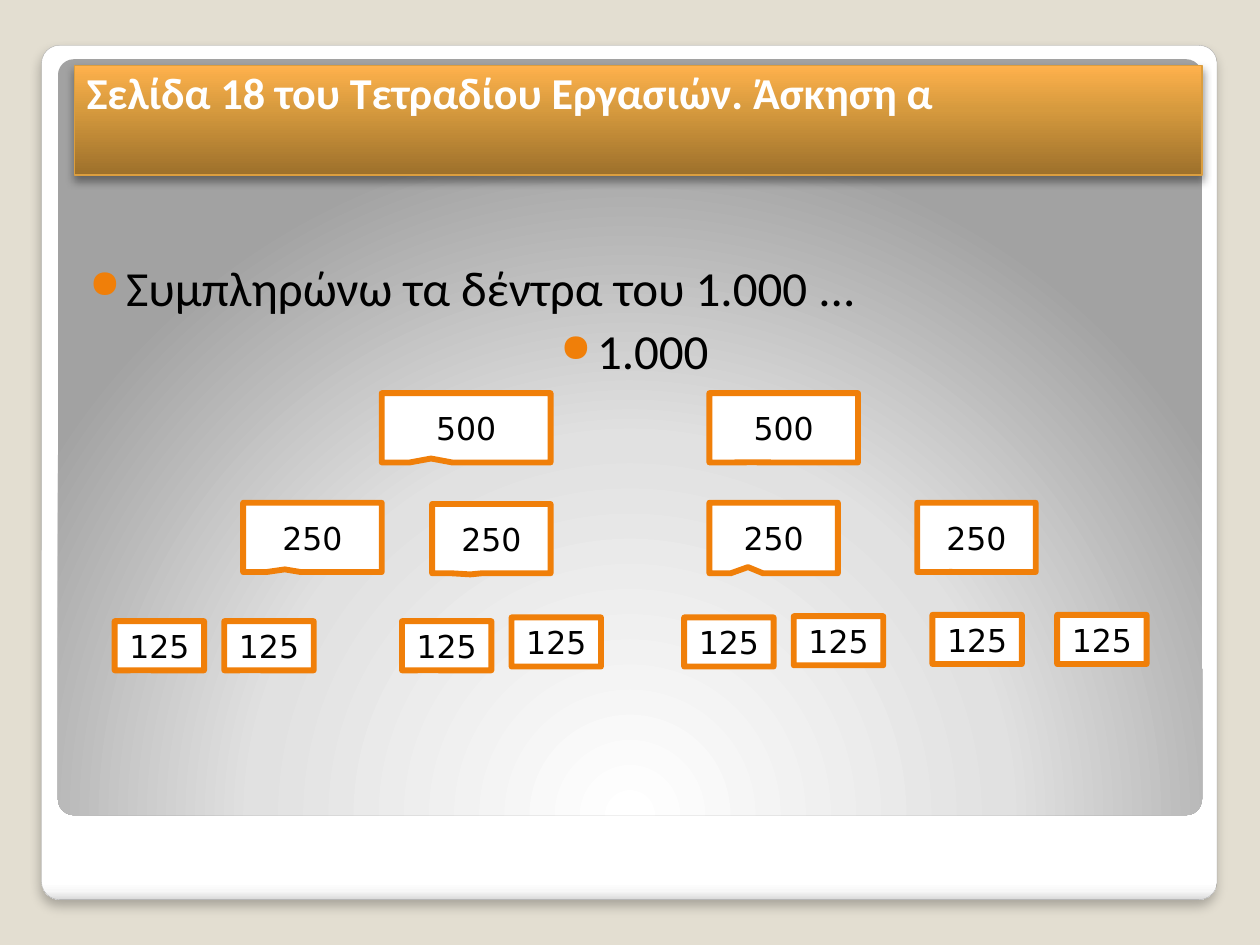
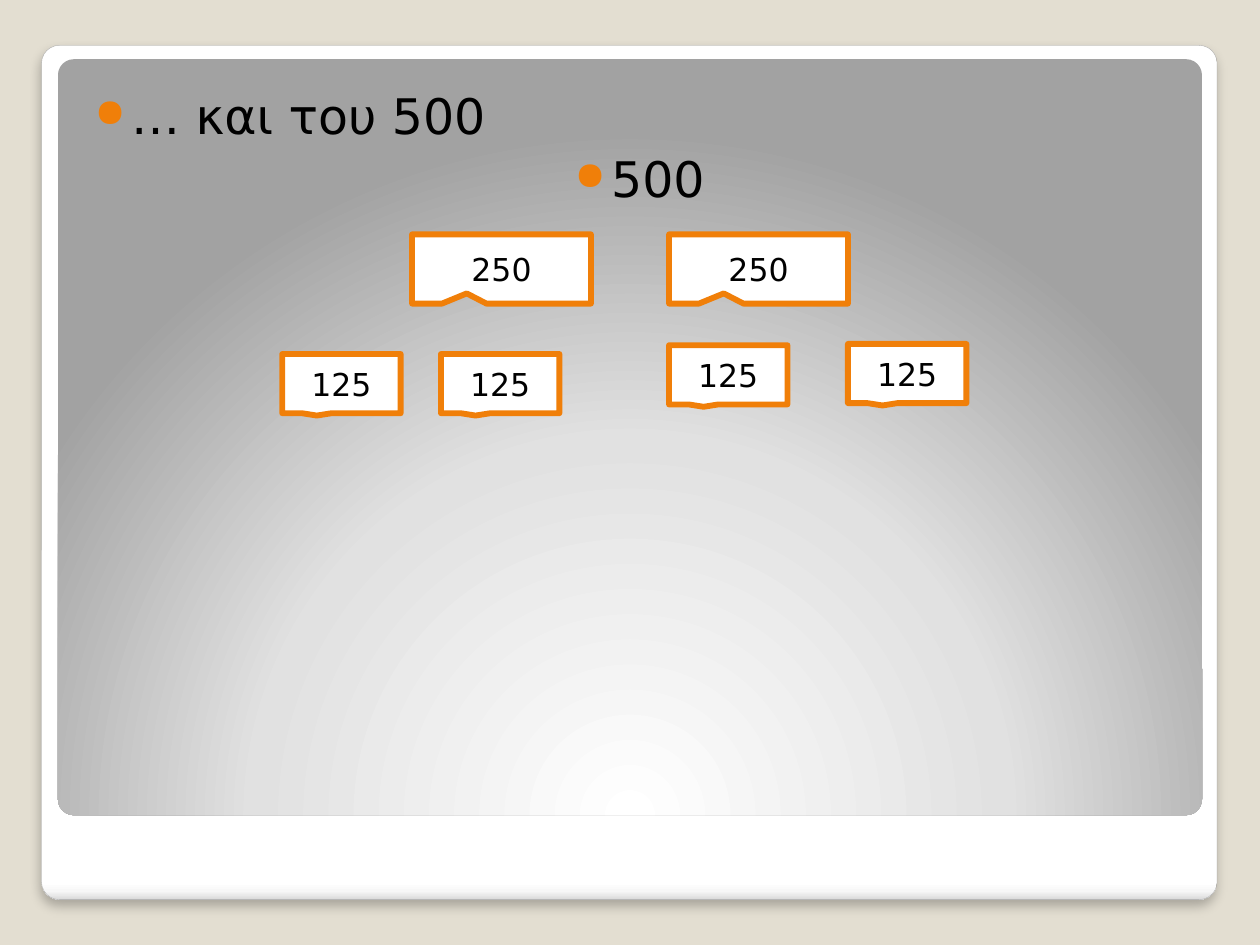
from lxml import etree
from pptx import Presentation
from pptx.dml.color import RGBColor
from pptx.enum.shapes import MSO_SHAPE
from pptx.enum.text import MSO_ANCHOR, PP_ALIGN
from pptx.oxml.ns import qn
from pptx.util import Inches, Pt

RECT = MSO_SHAPE.RECTANGLE
ROUND = MSO_SHAPE.ROUNDED_RECTANGLE
CALL = MSO_SHAPE.RECTANGULAR_CALLOUT
TOP, MIDDLE = MSO_ANCHOR.TOP, MSO_ANCHOR.MIDDLE
LEFT, CENTER = PP_ALIGN.LEFT, PP_ALIGN.CENTER

SAND, WHITE, BLACK = "E3DED1", "FFFFFF", "000000"
ORANGE, GOLD, GREY = "F07F09", "DB9E3F", "A4A4A4"
SANS, MAIN = "DejaVu Sans", "Calibri"

CARD = [(0, WHITE), (98, WHITE), (99, "F7F7F7"), (100, "DADADA")]
GLOW = [(0, WHITE), (55, "E1E1E1"), (100, "A2A2A2")]
BAND = [(0, "9D702B"), (60, "D69A3E"), (100, "FFB14C")]

TREE_1000 = [
    ("500", [(3.03, 3.12, 1.34, 0.55, -0.208, 0.444),
             (5.63, 3.12, 1.18, 0.55, -0.217, 0.498)]),
    ("250", [(1.93, 3.99, 1.1, 0.55, -0.199, 0.462),
             (3.43, 4, 0.94, 0.55, -0.177, 0.516),
             (5.63, 3.99, 1.02, 0.56, -0.199, 0.413),
             (7.28, 3.99, 0.94, 0.55, -0.219, 0.498)]),
    ("125", [(x, y, 0.71, 0.39, -0.208, 0.498) for x, y in [
        (0.91, 4.93), (1.78, 4.93), (3.19, 4.93), (4.06, 4.9),
        (5.43, 4.9), (6.3, 4.89), (7.4, 4.88), (8.39, 4.88)]]),
]
TREE_500 = [
    ("250", [(x, 1.86, 1.42, 0.55, -0.194, 0.353) for x in (3.27, 5.31)]),
    ("125", [(x, y, 0.94, 0.47, -0.208, 0.54) for x, y in [
        (2.24, 2.81), (3.5, 2.81), (5.31, 2.74), (6.73, 2.73)]]),
]


def color(code):
    return RGBColor.from_string(code)


def put(obj, vals):
    for key, val in vals.items():
        setattr(obj, key, val)


def sub(node, tag, **vals):
    return etree.SubElement(node, qn(tag), {k: str(v) for k, v in vals.items()})


def shade(shape, stops, angle=None):
    shape.fill.solid()
    props = shape.element.spPr
    old = props.find(qn("a:solidFill"))
    grad = etree.Element(qn("a:gradFill"), rotWithShape="1")
    marks = sub(grad, "a:gsLst")
    for pos, code in stops:
        sub(sub(marks, "a:gs", pos=pos * 1000), "a:srgbClr", val=code)
    if angle is None:
        ring = sub(grad, "a:path", path="circle")
        sub(ring, "a:fillToRect", l=50000, t=175000, r=50000, b=-75000)
    else:
        sub(grad, "a:lin", ang=angle * 60000, scaled=0)
    props.replace(old, grad)


def cast(shape, alpha, blur, dist):
    effect = shape.element.spPr.find(qn("a:effectLst"))
    drop = sub(effect, "a:outerShdw", blurRad=Pt(blur), dist=Pt(dist),
               dir=90 * 60000, algn="t", rotWithShape=0)
    sub(sub(drop, "a:srgbClr", val=BLACK), "a:alpha", val=alpha * 1000)


def block(slide, kind, box, edge=None, width=0):
    shape = slide.shapes.add_shape(kind, *map(Inches, box))
    shape.shadow.inherit = False
    if edge:
        shape.line.color.rgb = color(edge)
        shape.line.width = Pt(width)
    else:
        shape.line.fill.background()
    return shape


def write(para, text, font, size, code, align=LEFT, bold=False):
    para.alignment = align
    run = para.add_run()
    run.text = text
    put(run.font, {"name": font, "size": Pt(size), "bold": bold})
    run.font.color.rgb = color(code)


def frame(slide):
    fill = slide.background.fill
    fill.solid()
    fill.fore_color.rgb = color(SAND)
    card = block(slide, ROUND, (0.33, 0.36, 9.33, 6.78), GREY, 0.16)
    shade(card, CARD, 90)
    cast(card, 25, 6, 4)
    panel = block(slide, ROUND, (0.46, 0.47, 9.08, 6))
    shade(panel, GLOW)
    for shape in (card, panel):
        shape.adjustments[0] = 0.021


def title(slide, text):
    band = block(slide, RECT, (0.59, 0.52, 8.95, 0.87), GOLD, 0.75)
    shade(band, BAND, 270)
    cast(band, 40, 5.2, 3)
    put(band.text_frame, {"vertical_anchor": TOP, "margin_top": 0})
    write(band.text_frame.paragraphs[0], text, MAIN, 25.2, WHITE, bold=True)


def bullet(para):
    para.space_before = Pt(2.5)
    props = para._p.get_or_add_pPr()
    props.set("marL", str(Inches(0.29)))
    props.set("indent", str(Inches(-0.29)))
    sub(sub(props, "a:buClr"), "a:srgbClr", val=ORANGE)
    sub(props, "a:buSzPct", val=80000)
    sub(props, "a:buChar", char="●")


def body(slide, left, top, font, task, root):
    box = slide.shapes.add_textbox(*map(Inches, (left, top, 8.95, 4.58)))
    text = box.text_frame
    put(text, {"word_wrap": True, "margin_left": Inches(0.2),
               "margin_top": Inches(0.1), "margin_right": Inches(0.1),
               "margin_bottom": Inches(0.05)})
    first, second = text.paragraphs[0], text.add_paragraph()
    for para, line, align in ((first, task, LEFT), (second, root, CENTER)):
        write(para, line, font, 28, BLACK, align)
        bullet(para)


def tree(slide, rows):
    for label, nodes in rows:
        for *box, tip_x, tip_y in nodes:
            node = block(slide, CALL, box, ORANGE, 3.35)
            node.fill.solid()
            node.fill.fore_color.rgb = color(WHITE)
            node.adjustments[0] = tip_x
            node.adjustments[1] = tip_y
            put(node.text_frame, {"vertical_anchor": MIDDLE,
                                  "margin_left": Inches(0.05),
                                  "margin_right": Inches(0.05)})
            write(node.text_frame.paragraphs[0], label, SANS, 18, BLACK, CENTER)


def main():
    deck = Presentation()
    put(deck, {"slide_width": Inches(10), "slide_height": Inches(7.5)})
    blank = deck.slide_layouts[6]

    slide = deck.slides.add_slide(blank)
    frame(slide)
    body(slide, 0.51, 1.94, MAIN, "Συμπληρώνω τα δέντρα του 1.000 ...", "1.000")
    title(slide, "Σελίδα 18 του Τετραδίου Εργασιών. Άσκηση α")
    tree(slide, TREE_1000)

    slide = deck.slides.add_slide(blank)
    frame(slide)
    body(slide, 0.55, 0.58, SANS, "… και του 500", "500")
    tree(slide, TREE_500)

    deck.save("out.pptx")


if __name__ == "__main__":
    main()
